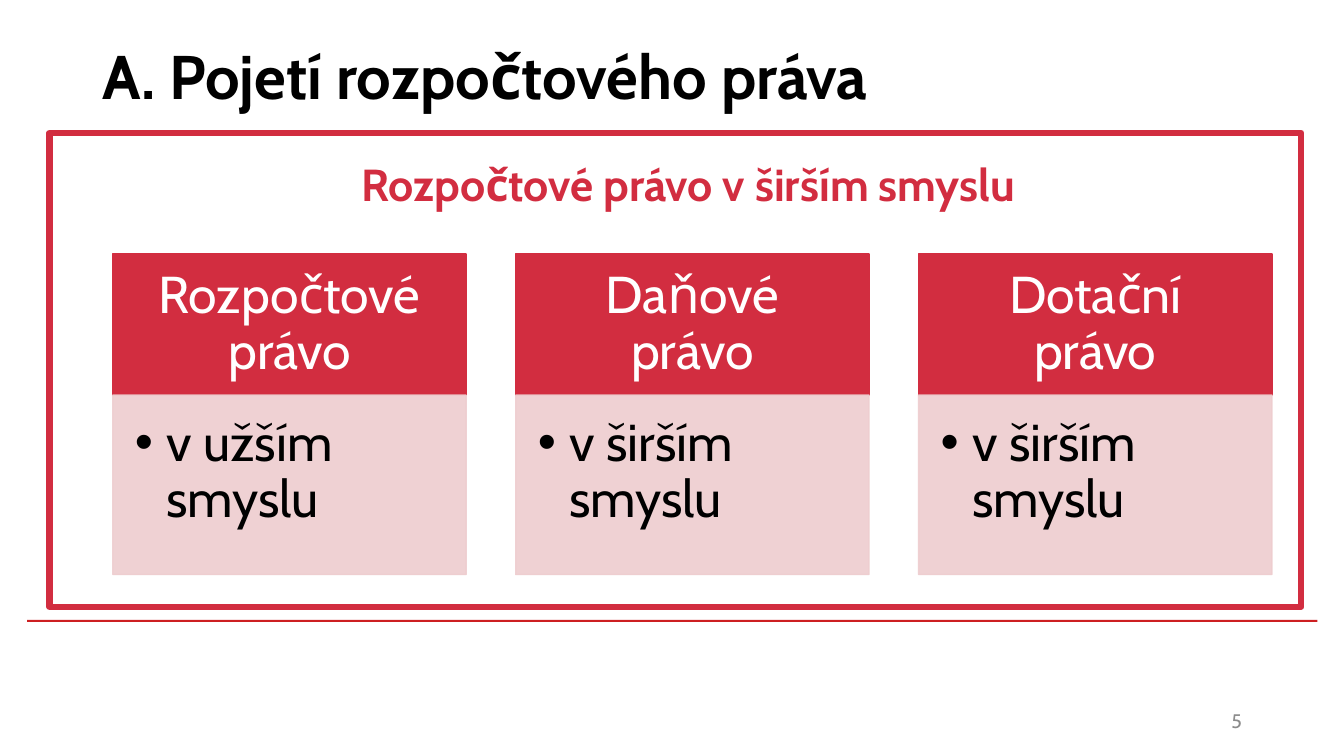
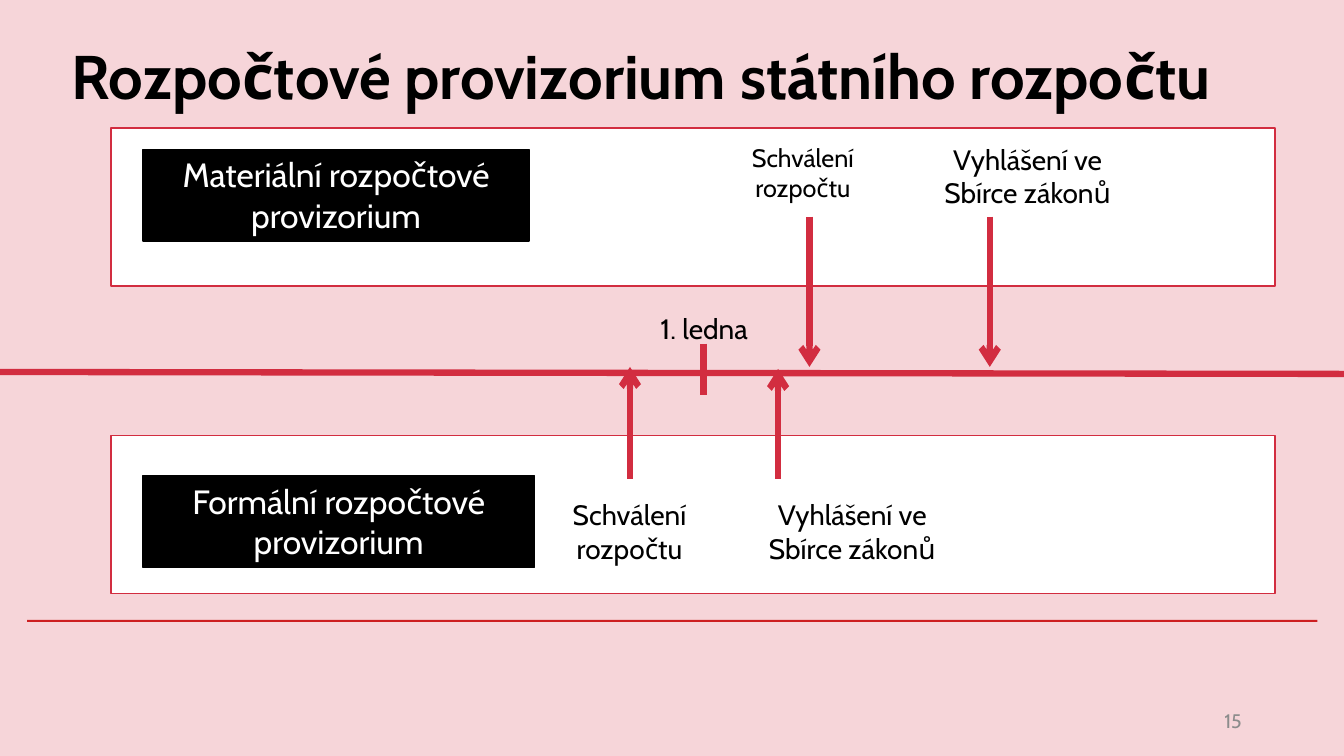
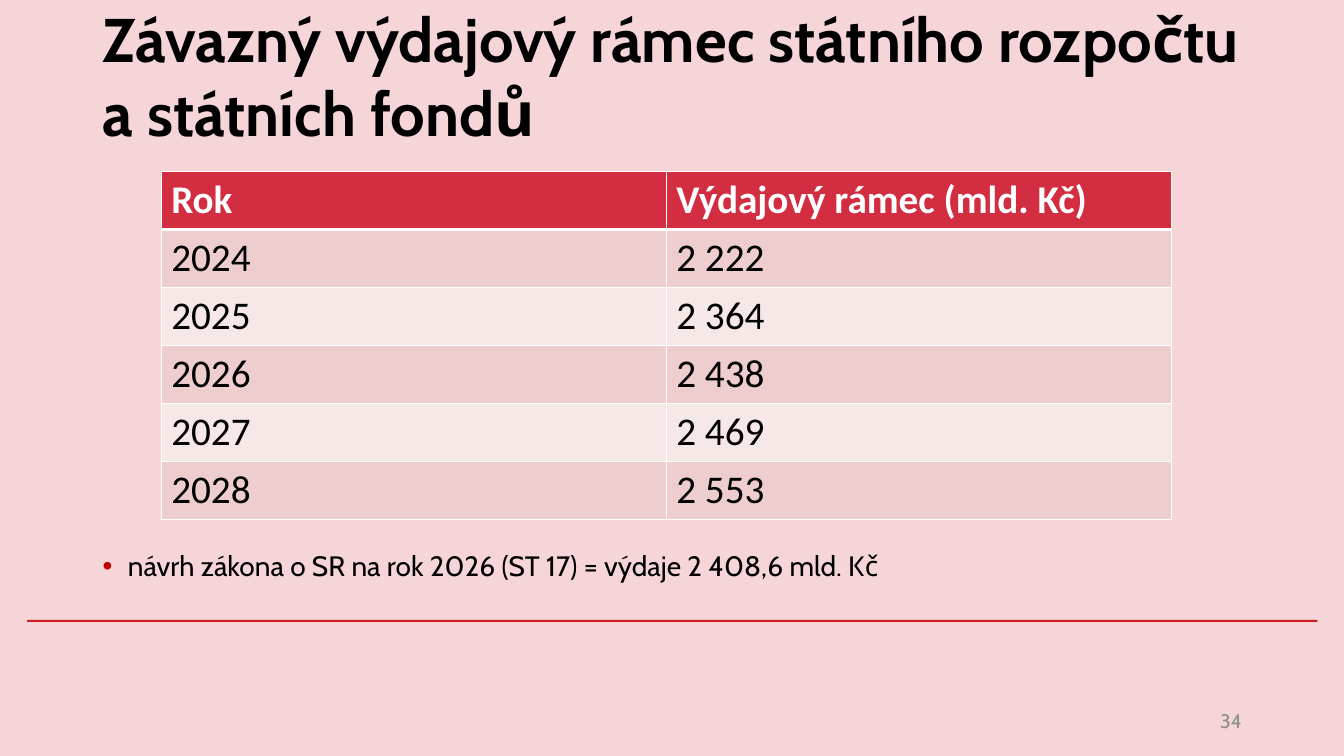
from lxml import etree
from pptx import Presentation
from pptx.dml.color import RGBColor
from pptx.enum import shapes, text
from pptx.oxml import ns
from pptx.util import Pt

COLORS = {
    "white": "FFFFFF",
    "black": "000000",
    "red": "D22D40",
    "rule": "CD1F21",
    "bullet": "C00000",
    "pink": "EECDCF",
    "pale": "F7E8E8",
    "blush": "F6D5D9",
    "gray": "8C8C8C",
}
FONT = "Cabin"
LEFT, CENTER, RIGHT = text.PP_ALIGN.LEFT, text.PP_ALIGN.CENTER, text.PP_ALIGN.RIGHT
TOP, MIDDLE = text.MSO_ANCHOR.TOP, text.MSO_ANCHOR.MIDDLE
INSETS = (7.2, 3.6, 7.2, 3.6)


def rgb(name):
    return RGBColor.from_string(COLORS[name])


def pts(values):
    return [Pt(value) for value in values]


def add_xml(parent, tag, **attributes):
    return etree.SubElement(parent, ns.qn(tag), attributes)


def add_bullet(para, color, indent):
    properties = para._p.get_or_add_pPr()
    properties.set("marL", str(Pt(indent)))
    properties.set("indent", str(-Pt(indent)))
    add_xml(add_xml(properties, "a:buClr"), "a:srgbClr", val=COLORS[color])
    add_xml(properties, "a:buFont", typeface="Arial")
    add_xml(properties, "a:buChar", char="•")


def write(frame, content, size=20, color="black", bold=False, font=FONT, align=LEFT,
          anchor=TOP, insets=INSETS, spacing=1.0, bullet=None, indent=18):
    frame.word_wrap = True
    frame.auto_size = text.MSO_AUTO_SIZE.NONE
    frame.vertical_anchor = anchor
    frame.margin_left, frame.margin_top, frame.margin_right, frame.margin_bottom = pts(insets)
    para = frame.paragraphs[0]
    if bullet:
        add_bullet(para, bullet, indent)
    para.alignment = align
    para.line_spacing = spacing
    para.space_before = Pt(0)
    span = para.add_run()
    span.text = content
    span.font.name = font
    span.font.size = Pt(size)
    span.font.bold = bold
    span.font.color.rgb = rgb(color)


class Slides:
    def __init__(self):
        self.deck = Presentation()
        self.deck.slide_width, self.deck.slide_height = pts((960, 540))
        self.page = None

    def start(self, title, number, background="blush", layout=5, title_at=(66.2, 1.4, 828, 104.4)):
        self.page = self.deck.slides.add_slide(self.deck.slide_layouts[layout])
        fill = self.page.background.fill
        fill.solid()
        fill.fore_color.rgb = rgb(background)
        self.rect((19.4, 442.8, 921.6, 1.5), "rule")
        self.fill_placeholder(self.page.shapes.title, title_at, title,
                              size=44, bold=True, anchor=MIDDLE)
        self.label((678.2, 500.4, 216, 28.8), number, size=14, color="gray",
                   align=RIGHT, anchor=MIDDLE)

    def fill_placeholder(self, holder, at, content, **style):
        holder.left, holder.top, holder.width, holder.height = pts(at)
        write(holder.text_frame, content, **style)

    def body(self, at, content, **style):
        self.fill_placeholder(self.page.placeholders[1], at, content, **style)

    def label(self, at, content, **style):
        box = self.page.shapes.add_textbox(*pts(at))
        write(box.text_frame, content, **style)

    def rect(self, at, fill, line=None, width=1, opacity=None, content=None, **style):
        box = self.page.shapes.add_shape(shapes.MSO_SHAPE.RECTANGLE, *pts(at))
        box.shadow.inherit = False
        box.fill.solid()
        box.fill.fore_color.rgb = rgb(fill)
        if line:
            box.line.color.rgb = rgb(line)
            box.line.width = Pt(width)
        else:
            box.line.fill.background()
        if opacity:
            for color in box.element.spPr.iter(ns.qn("a:srgbClr")):
                add_xml(color, "a:alpha", val=str(opacity * 1000))
        if content:
            write(box.text_frame, content, **style)

    def line(self, x1, y1, x2, y2, arrow=False):
        connector = self.page.shapes.add_connector(
            shapes.MSO_CONNECTOR.STRAIGHT, *pts((x1, y1, x2, y2)))
        connector.line.color.rgb = rgb("red")
        connector.line.width = Pt(4.5)
        properties = connector.element.spPr
        if arrow:
            add_xml(properties.find(ns.qn("a:ln")), "a:tailEnd", type="arrow")
        add_xml(properties, "a:effectLst")

    def table(self, left, top, column_width, row_height, rows):
        columns = len(rows[0])
        frame = self.page.shapes.add_table(
            len(rows), columns,
            *pts((left, top, column_width * columns, row_height * len(rows))))
        for row_index, values in enumerate(rows):
            header = row_index == 0
            frame.table.rows[row_index].height = Pt(row_height)
            fill = "red" if header else ("pale", "pink")[row_index % 2]
            widths = {"L": 1, "R": 1, "T": 3 if row_index == 1 else 1, "B": 3 if header else 1}
            for column_index, value in enumerate(values):
                cell = frame.table.cell(row_index, column_index)
                write(cell.text_frame, value, size=28, font="Calibri", bold=header,
                      color="white" if header else "black")
                cell.fill.solid()
                cell.fill.fore_color.rgb = rgb(fill)
                self.borders(cell, widths)

    def borders(self, cell, widths):
        properties = cell._tc.get_or_add_tcPr()
        for index, (side, width) in enumerate(widths.items()):
            edge = add_xml(properties, f"a:ln{side}", w=str(Pt(width)))
            add_xml(add_xml(edge, "a:solidFill"), "a:srgbClr", val=COLORS["white"])
            properties.insert(index, edge)


def concept_slide(slides):
    slides.start("A. Pojetí rozpočtového práva", "5", background="white")
    slides.rect((35.3, 95, 894.2, 338.4), "white", "red", 4.5)
    cards = [
        ("Rozpočtové právo", "v užším smyslu"),
        ("Daňové právo", "v širším smyslu"),
        ("Dotační právo", "v širším smyslu"),
    ]
    for index, (heading, detail) in enumerate(cards):
        left = 80.6 + 287.8 * index
        slides.rect((left, 181.4, 252.4, 100.8), "red", "red", content=heading,
                    size=37, color="white", align=CENTER, anchor=MIDDLE, spacing=0.9,
                    insets=(20.9, 11.5, 20.9, 11.5))
        slides.rect((left, 282.2, 252.4, 128.2), "pink", "pink", opacity=90, content=detail,
                    size=37, spacing=0.9, bullet="black", indent=22.5,
                    insets=(15.8, 15.8, 20.9, 23))
    slides.label((81.4, 108.7, 820.8, 46.1), "Rozpočtové právo v širším smyslu",
                 size=32, color="red", bold=True, align=CENTER)


def provisional_slide(slides):
    slides.start("Rozpočtové provizorium státního rozpočtu", "15",
                 title_at=(43.9, 1.4, 896.4, 104.4))
    bands = [
        (91.4, 106.6, 275.8, "Materiální rozpočtové provizorium"),
        (311, 339.8, 279.4, "Formální rozpočtové provizorium"),
    ]
    for band_top, name_top, name_width, name in bands:
        slides.rect((79.2, band_top, 831.6, 113), "white", "red")
        slides.rect((102.2, name_top, name_width, 65.5), "black", "black",
                    content=name, size=24, color="white", align=CENTER)
    slides.line(502.6, 245.5, 502.6, 282.2)
    slides.label((434.9, 218.9, 136.1, 31.7), "1. ledna", align=CENTER)
    approval, publication = "Schválení rozpočtu", "Vyhlášení ve Sbírce zákonů"
    events = [
        (578.2, 154.8, 262.1, 501.8, 97.9, approval, 18),
        (707, 154.8, 262.1, 662.4, 97.9, publication, 20),
        (450, 342, 262.1, 378, 352.1, approval, 20),
        (555.8, 342, 263.5, 537.1, 352.1, publication, 20),
    ]
    for x, start, end, left, top, event, size in events:
        slides.line(x, start, x, end, arrow=True)
        slides.label((left, top, 143.3, 55.4), event, size=size, align=CENTER)
    slides.line(0, 265.7, 960, 267.1)


def limits_slide(slides):
    slides.start("Závazný výdajový rámec státního rozpočtu a státních fondů", "34", layout=1)
    slides.table(115.2, 122.4, 360.7, 41.4, [
        ("Rok", "Výdajový rámec (mld. Kč)"),
        ("2024", "2 222"),
        ("2025", "2 364"),
        ("2026", "2 438"),
        ("2027", "2 469"),
        ("2028", "2 553"),
    ])
    slides.body((66.2, 391, 828, 43), "návrh zákona o SR na rok 2026 (ST 17) = výdaje 2 408,6 mld. Kč",
                spacing=0.9, bullet="bullet")


def main():
    slides = Slides()
    concept_slide(slides)
    provisional_slide(slides)
    limits_slide(slides)
    slides.deck.save("out.pptx")


if __name__ == "__main__":
    main()
